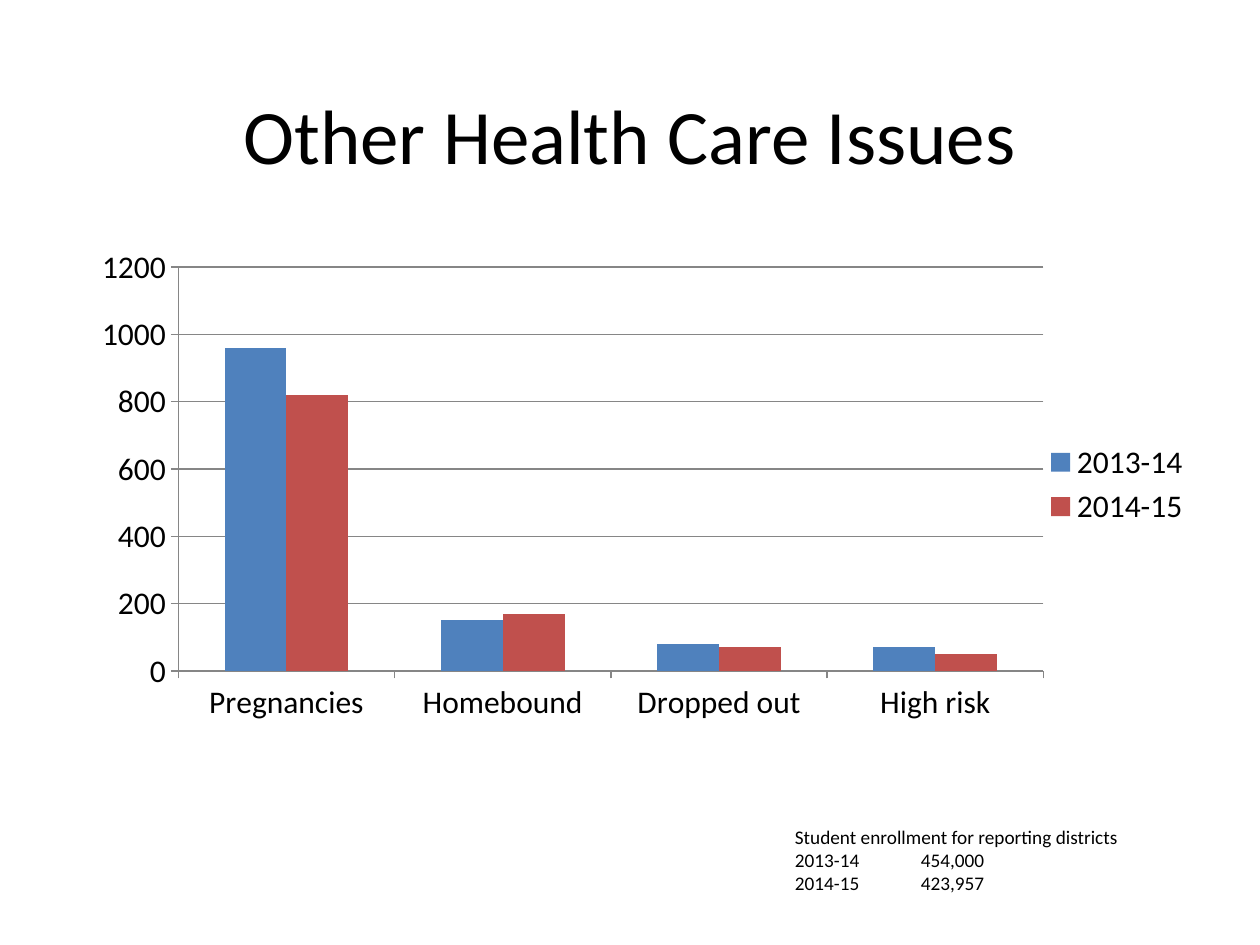
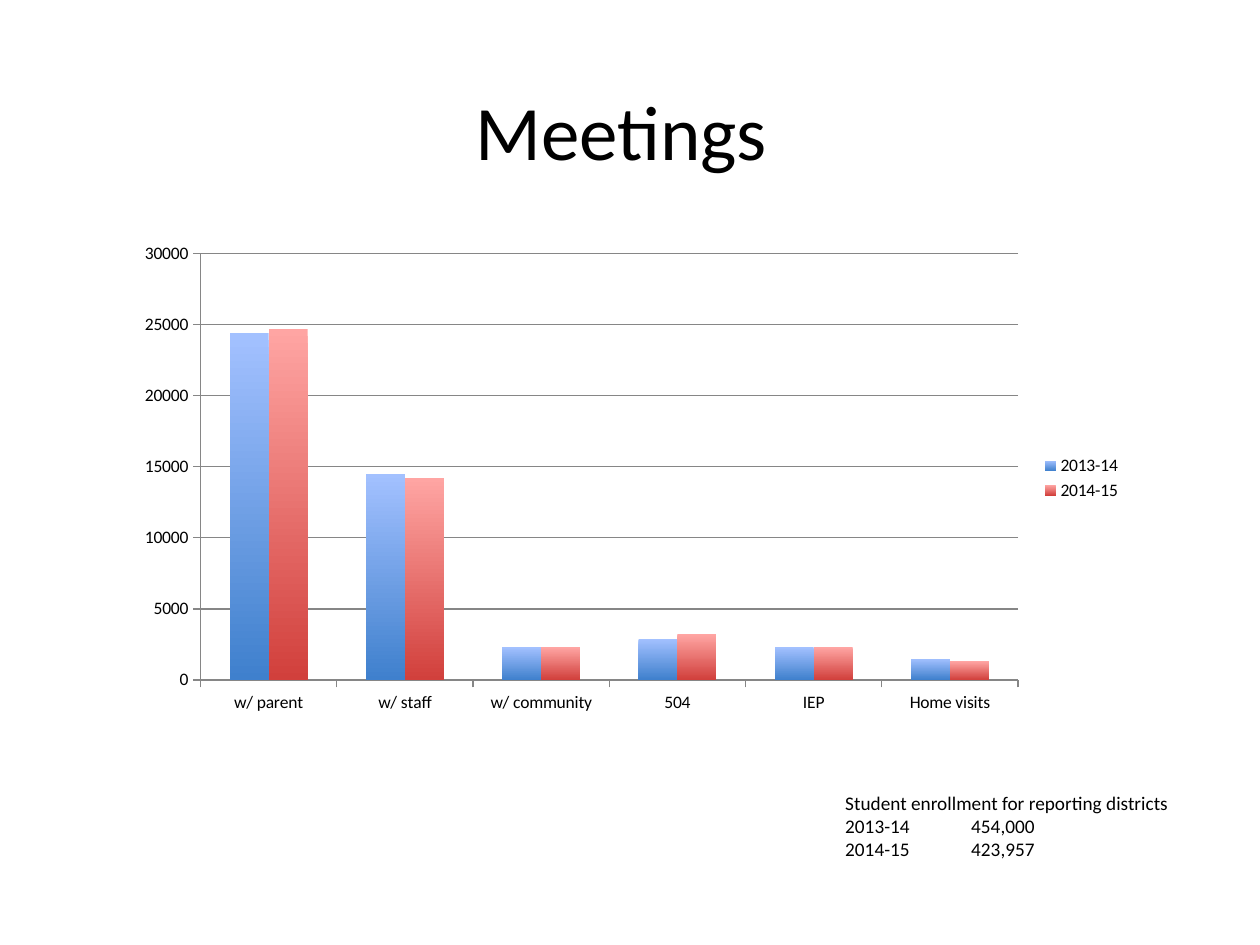
"""Build two chart slides on school health care issues and meetings."""
from dataclasses import dataclass

from lxml import etree
from pptx import Presentation
from pptx.chart.data import CategoryChartData
from pptx.dml.color import RGBColor
from pptx.enum.chart import XL_CHART_TYPE, XL_LEGEND_POSITION
from pptx.enum.text import MSO_ANCHOR, MSO_AUTO_SIZE, PP_ALIGN
from pptx.util import Inches, Pt

COLUMN = XL_CHART_TYPE.COLUMN_CLUSTERED
RIGHT = XL_LEGEND_POSITION.RIGHT
MIDDLE = MSO_ANCHOR.MIDDLE
GROW = MSO_AUTO_SIZE.SHAPE_TO_FIT_TEXT
CENTER = PP_ALIGN.CENTER


@dataclass(frozen=True)
class Theme:
    font: str = "Calibri"
    ink: str = "000000"
    line: str = "868686"
    flat: tuple = (("4F81BD",), ("C0504D",))
    fade: tuple = (("A3C1FF", "3F80CD"), ("FFA5A3", "D1403C"))
    title: int = 44
    note: int = 11


theme = Theme()
years = ("2013-14", "2014-15")
counts = ("454,000", "423,957")
note = ["Student enrollment for reporting districts"]
note += [f"{year}\t{count}" for year, count in zip(years, counts)]

pages = [
    {
        "title": "Other Health Care Issues", "top": 0.43,
        "chart": (0.43, 1.91, 9.12, 3.87), "size": 18,
        "plot": (0.108, 0.054, 0.753, 0.829),
        "cats": ("Pregnancies", "Homebound", "Dropped out", "High risk"),
        "vals": ((960, 150, 80, 70), (820, 170, 70, 50)),
        "fills": theme.flat, "note": (6.21, 6.5, 5, 0.66), "wrap": True,
    },
    {
        "title": "Meetings ", "top": 0.4,
        "chart": (1, 1.86, 8, 3.87), "size": 10,
        "plot": (0.074, 0.04, 0.811, 0.874),
        "cats": ("w/ parent", "w/ staff", "w/ community", "504", "IEP", "Home visits"),
        "vals": ((24400, 14500, 2300, 2900, 2300, 1500),
                 (24700, 14200, 2300, 3200, 2300, 1300)),
        "fills": theme.fade, "note": (6.61, 6.23, 2.94, 0.66), "wrap": False,
    },
]


def style(font, size):
    font.name = theme.font
    font.size = Pt(size)
    font.color.rgb = RGBColor.from_string(theme.ink)


def place_plot(chart, box):
    area = chart._chartSpace.chart.plotArea
    space = etree.QName(area).namespace
    for old in area.findall(f"{{{space}}}layout"):
        area.remove(old)
    layout = etree.Element(f"{{{space}}}layout")
    manual = etree.SubElement(layout, f"{{{space}}}manualLayout")
    parts = [("layoutTarget", "inner"), ("xMode", "edge"), ("yMode", "edge")]
    parts += zip("xywh", box)
    for tag, val in parts:
        etree.SubElement(manual, f"{{{space}}}{tag}", val=str(val))
    area.insert(0, layout)


deck = Presentation()
deck.slide_width, deck.slide_height = Inches(10), Inches(7.5)

for page in pages:
    slide = deck.slides.add_slide(deck.slide_layouts[5])
    title = slide.shapes.title
    title.left, title.top = Inches(1), Inches(page["top"])
    title.width, title.height = Inches(8), Inches(1.26)
    title.text_frame.text = page["title"]
    title.text_frame.vertical_anchor = MIDDLE
    head = title.text_frame.paragraphs[0]
    head.alignment = CENTER
    style(head.font, theme.title)

    data = CategoryChartData()
    data.categories = page["cats"]
    for year, vals in zip(years, page["vals"]):
        data.add_series(year, vals)
    box = map(Inches, page["chart"])
    chart = slide.shapes.add_chart(COLUMN, *box, data).chart
    chart.has_title = False
    chart.has_legend = True
    chart.legend.position = RIGHT
    chart.legend.include_in_layout = False
    style(chart.font, page["size"])
    place_plot(chart, page["plot"])

    plot = chart.plots[0]
    plot.gap_width, plot.overlap = 150, 0
    plot.vary_by_categories = False
    for series, tones in zip(plot.series, page["fills"]):
        fill = series.format.fill
        if len(tones) == 1:
            fill.solid()
            fill.fore_color.rgb = RGBColor.from_string(tones[0])
        else:
            fill.gradient()
            fill.gradient_angle = 270
            for stop, tone in zip(fill.gradient_stops, tones):
                stop.color.rgb = RGBColor.from_string(tone)

    grid = chart.value_axis.major_gridlines
    for part in (chart.category_axis, chart.value_axis, grid):
        part.format.line.color.rgb = RGBColor.from_string(theme.line)
        part.format.line.width = Pt(0.75)

    frame = slide.shapes.add_textbox(*map(Inches, page["note"])).text_frame
    frame.word_wrap = page["wrap"]
    frame.auto_size = GROW
    frame.text = "\n".join(note)
    for line in frame.paragraphs:
        style(line.font, theme.note)

deck.save("out.pptx")
